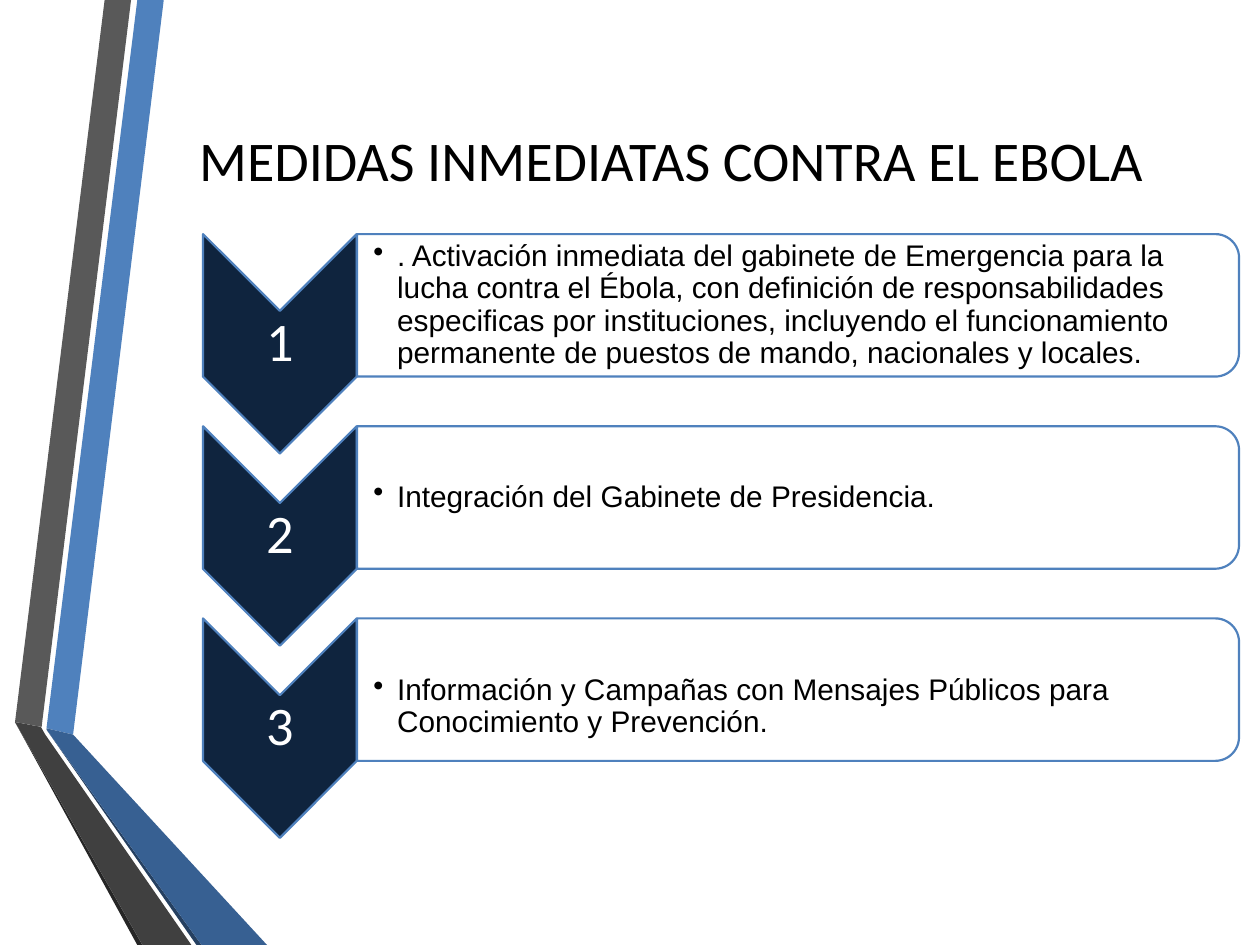
import pptx
import pptx.util
import pptx.dml.color
import pptx.enum.shapes
import pptx.enum.text
import pptx.oxml
import pptx.oxml.ns
from lxml import etree

Pt = pptx.util.Pt
MSO = pptx.enum.shapes.MSO_SHAPE
ALIGN = pptx.enum.text.PP_ALIGN

ACCENT = "4F81BD"

# Folded ribbons along the left edge: colour and corner points
RIBBONS = [
    (ACCENT, [(26.6, 416.2), (41.8, 419.8), (93.6, 0), (78.5, 0)]),
    ("595959", [(74.9, 0), (59.8, 0), (8.6, 412.6), (23.8, 415.4)]),
    ("262626", [(8.6, 412.6), (78.5, 540), (81.4, 540)]),
    ("254061", [(26.6, 416.9), (112.3, 540), (115.2, 540)]),
    ("376092", [(26.6, 416.9), (115.2, 540), (152.6, 540), (41.8, 419.8), (26.6, 416.2)]),
    ("404040", [(109.4, 540), (25.9, 419.8), (23.4, 415.4), (8.6, 412.6), (81.4, 540)]),
]

# Number, text and extra inset above the text
MEASURES = [
    ("1", ". Activación inmediata del gabinete de Emergencia para la lucha contra el Ébola, "
          "con definición de responsabilidades especificas por instituciones, incluyendo el "
          "funcionamiento permanente de puestos de mando, nacionales y locales.", 0),
    ("2", "Integración del Gabinete de Presidencia.", 0),
    ("3", "Información y Campañas con Mensajes Públicos para Conocimiento y Prevención.", 20),
]
FIRST_TOP = 133.8
PITCH = 109.8


def rgb(hex_color):
    return pptx.dml.color.RGBColor.from_string(hex_color)


def add_ribbon(s, color, points):
    corners = [(Pt(x), Pt(y)) for x, y in points]
    builder = s.shapes.build_freeform(*corners[0], scale=1.0)
    builder.add_line_segments(corners[1:], close=True)
    sp = builder.convert_to_shape()
    sp.shadow.inherit = False
    sp.fill.solid()
    sp.fill.fore_color.rgb = rgb(color)
    sp.line.fill.background()


def add_turned(s, kind, left, top, width, height, fill, alpha=None):
    """Add a preset turned by 90 degrees that covers the given area."""
    shift = (width - height) / 2
    sp = s.shapes.add_shape(kind, Pt(left + shift), Pt(top - shift), Pt(height), Pt(width))
    sp.rotation = 90
    sp.shadow.inherit = False
    sp.fill.solid()
    sp.fill.fore_color.rgb = rgb(fill)
    sp.line.color.rgb = rgb(ACCENT)
    sp.line.width = Pt(1.25)
    if alpha is not None:
        color = sp.fill._xPr.find(".//" + pptx.oxml.ns.qn("a:srgbClr"))
        etree.SubElement(color, pptx.oxml.ns.qn("a:alpha"), val=str(alpha * 1000))
    return sp


def add_text(s, text, left, top, width, height, *, size, font, color="000000",
             align=ALIGN.LEFT, spacing=None, insets=(7.2, 3.6, 7.2, 3.6), bullet_indent=None):
    tf = s.shapes.add_textbox(Pt(left), Pt(top), Pt(width), Pt(height)).text_frame
    tf.word_wrap = True
    tf.vertical_anchor = pptx.enum.text.MSO_ANCHOR.MIDDLE
    tf.margin_left, tf.margin_top, tf.margin_right, tf.margin_bottom = map(Pt, insets)
    p = tf.paragraphs[0]
    p.alignment = align
    if spacing:
        p.line_spacing = spacing
    if bullet_indent:
        pPr = p._p.get_or_add_pPr()
        pPr.set("marL", str(Pt(bullet_indent)))
        pPr.set("indent", str(-Pt(bullet_indent)))
        etree.SubElement(pPr, pptx.oxml.ns.qn("a:buChar"), char="•")
    r = p.add_run()
    r.text = text
    r.font.size = Pt(size)
    r.font.name = font
    r.font.color.rgb = rgb(color)


def add_measure(s, top, number, text, extra_inset):
    # Numbered chevron
    add_turned(s, MSO.CHEVRON, 116, top, 87.8, 125.4, "0F243E")
    add_text(s, number, 116, top + 44, 87.8, 37.4, size=31, font="Calibri", color="FFFFFF",
             align=ALIGN.CENTER, spacing=0.9, insets=(1.4,) * 4)
    # Panel with its bulleted text
    add_turned(s, MSO.ROUND_2_SAME_RECTANGLE, 204, top, 504, 81.4, "FFFFFF", alpha=90)
    add_text(s, text, 204, top + 4, 500, 73.4, size=17, font="Arial", spacing=0.9,
             insets=(9.4, 0.7 + extra_inset, 0.7, 0.7), bullet_indent=13.5)


def main():
    prs = pptx.Presentation()
    prs.slide_width, prs.slide_height = Pt(720), Pt(540)
    s = prs.slides.add_slide(prs.slide_layouts[6])

    # Decoration
    for color, points in RIBBONS:
        add_ribbon(s, color, points)

    # Title
    add_text(s, "MEDIDAS INMEDIATAS CONTRA EL EBOLA", 87.8, 54, 592, 74,
             size=32, font="Calibri", align=ALIGN.CENTER)

    # Measures
    for i, measure in enumerate(MEASURES):
        add_measure(s, FIRST_TOP + i * PITCH, *measure)

    prs.save("out.pptx")


if __name__ == "__main__":
    main()
